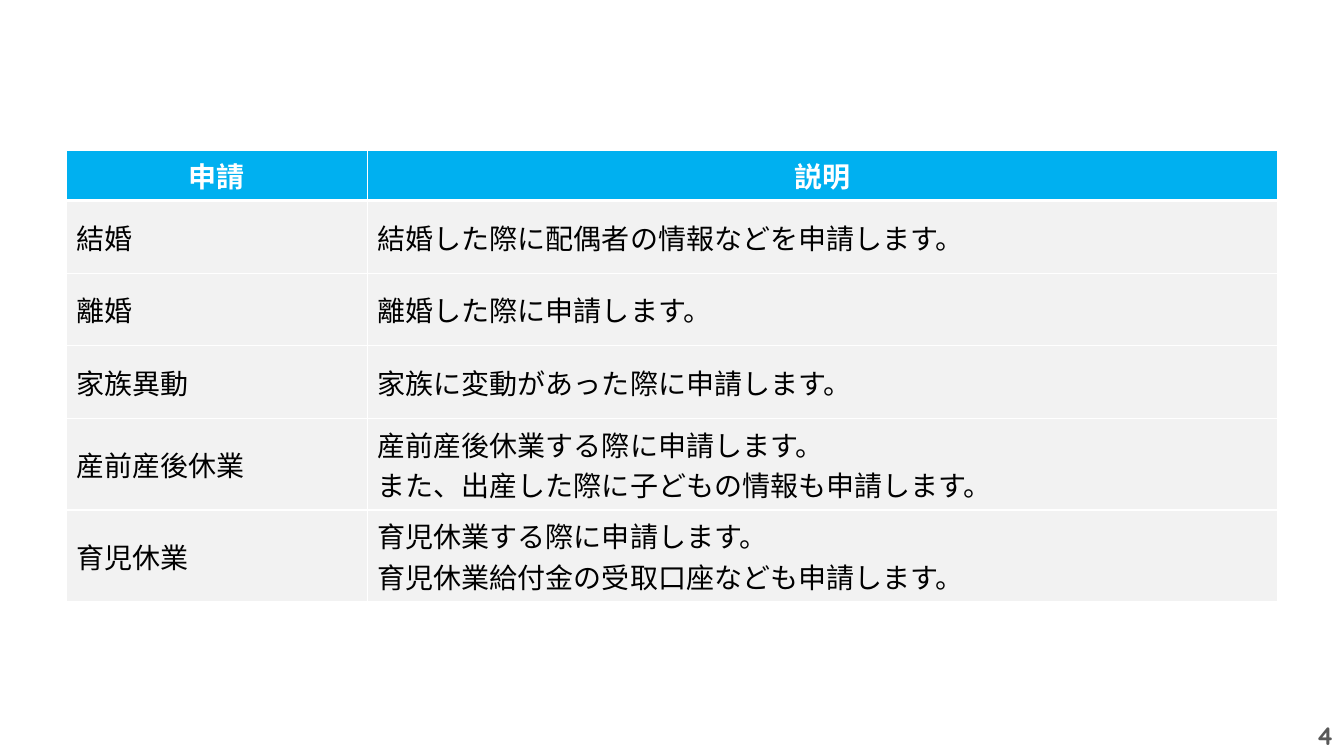
from lxml import etree
from pptx import Presentation
from pptx.dml.color import RGBColor as Rgb
from pptx.enum.text import MSO_ANCHOR as Anchor, PP_ALIGN as Align
from pptx.oxml.ns import qn
from pptx.util import Inches, Pt

# Content
HEAD = ("申請", "説明")
ROWS = [
    ("結婚", "結婚した際に配偶者の情報などを申請します。"),
    ("離婚", "離婚した際に申請します。"),
    ("家族異動", "家族に変動があった際に申請します。"),
    ("産前産後休業", "産前産後休業する際に申請します。\nまた、出産した際に子どもの情報も申請します。"),
    ("育児休業", "育児休業する際に申請します。\n育児休業給付金の受取口座なども申請します。"),
]
PAGE = "4"

# Style and grid, in inches
HUES = {"head": "00B0F0", "body": "F2F2F2", "white": "FFFFFF",
        "ink": "000000", "page": "595959"}
FONT, NUM = "Noto Sans CJK JP", "Quicksand"
WIDE, HIGH = 13.33, 7.5
COLS = (2.99, 9.03)
HEAD_H, ROW_H, PAIR_H = 0.5, 0.72, 0.91  # PAIR_H holds two lines
LEFT, TOP = (WIDE - sum(COLS)) / 2, 1.49


def write(frame, text, size, font, hue, bold, align):
    """Fill a text frame, one paragraph for each line."""
    frame.vertical_anchor = Anchor.MIDDLE
    frame.word_wrap = True
    for i, line in enumerate(text.split("\n")):
        par = frame.add_paragraph() if i else frame.paragraphs[0]
        par.alignment = align
        run = par.add_run()
        run.text = line
        face = run.font
        face.size, face.bold, face.name = Pt(size), bold, font
        face.color.rgb = Rgb.from_string(HUES[hue])
        east = etree.SubElement(face._element, qn("a:ea"))
        east.set("typeface", font)


def edge(cell, roof, base):
    """Draw white cell borders with the given upper and lower widths."""
    props = cell._tc.get_or_add_tcPr()
    for i, (side, width) in enumerate(zip("LRTB", (1, 1, roof, base))):
        line = etree.Element(qn(f"a:ln{side}"), w=str(Pt(width)))
        fill = etree.SubElement(line, qn("a:solidFill"))
        etree.SubElement(fill, qn("a:srgbClr"), val=HUES["white"])
        props.insert(i, line)


deck = Presentation()
deck.slide_width, deck.slide_height = Inches(WIDE), Inches(HIGH)
slide = deck.slides.add_slide(deck.slide_layouts[6])

# Page number
box_w, box_h = 3, 0.4
box = slide.shapes.add_textbox(Inches(WIDE - box_w), Inches(HIGH - box_h),
                               Inches(box_w), Inches(box_h))
write(box.text_frame, PAGE, 18, NUM, "page", True, Align.RIGHT)

# Table of requests
grid = [HEAD] + ROWS
highs = [HEAD_H] + [PAIR_H if "\n" in note else ROW_H for _, note in ROWS]
table = slide.shapes.add_table(len(grid), len(COLS), Inches(LEFT), Inches(TOP),
                               Inches(sum(COLS)), Inches(sum(highs))).table
for col, width in zip(table.columns, COLS):
    col.width = Inches(width)
for r, (texts, high) in enumerate(zip(grid, highs)):
    top = r == 0
    table.rows[r].height = Inches(high)
    for c, text in enumerate(texts):
        cell = table.cell(r, c)
        cell.vertical_anchor = Anchor.MIDDLE
        cell.fill.solid()
        cell.fill.fore_color.rgb = Rgb.from_string(HUES["head" if top else "body"])
        edge(cell, 3 if r == 1 else 1, 3 if top else 1)
        write(cell.text_frame, text, 20, FONT, "white" if top else "ink", top,
              Align.CENTER if top else Align.LEFT)

deck.save("out.pptx")
